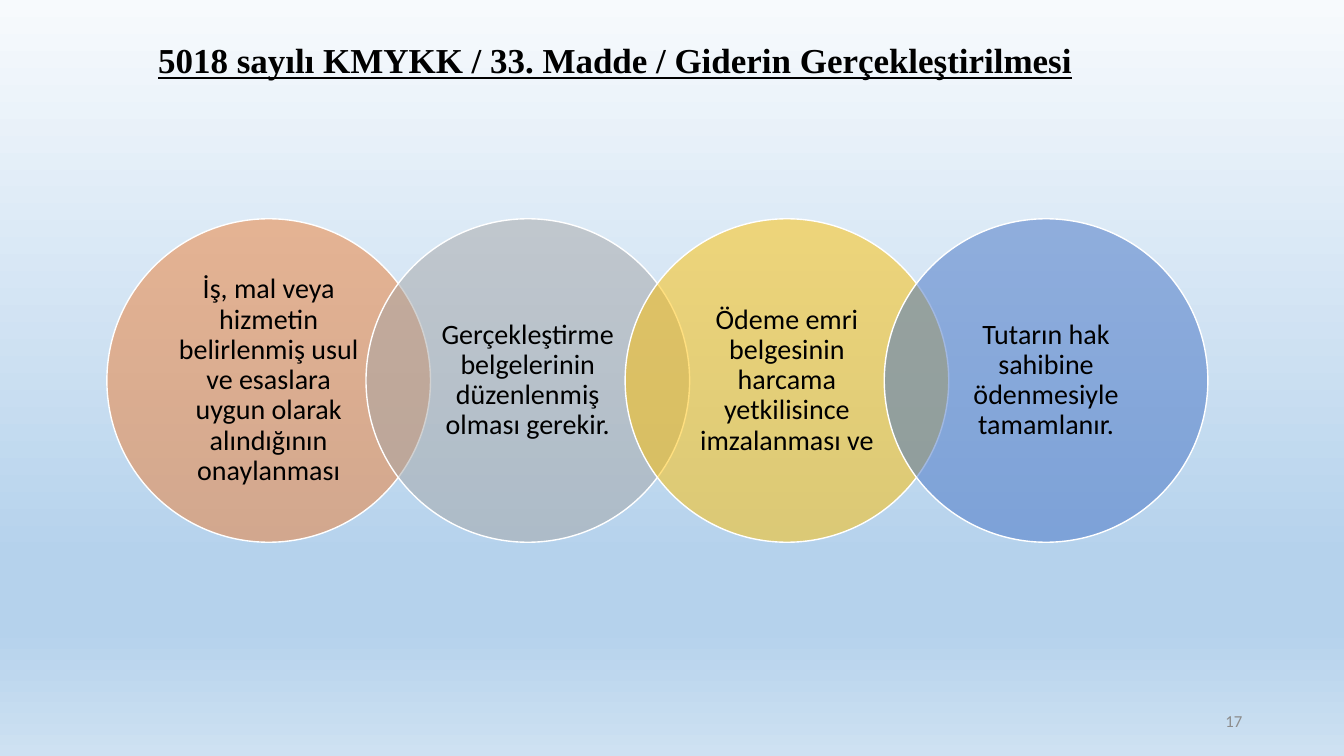
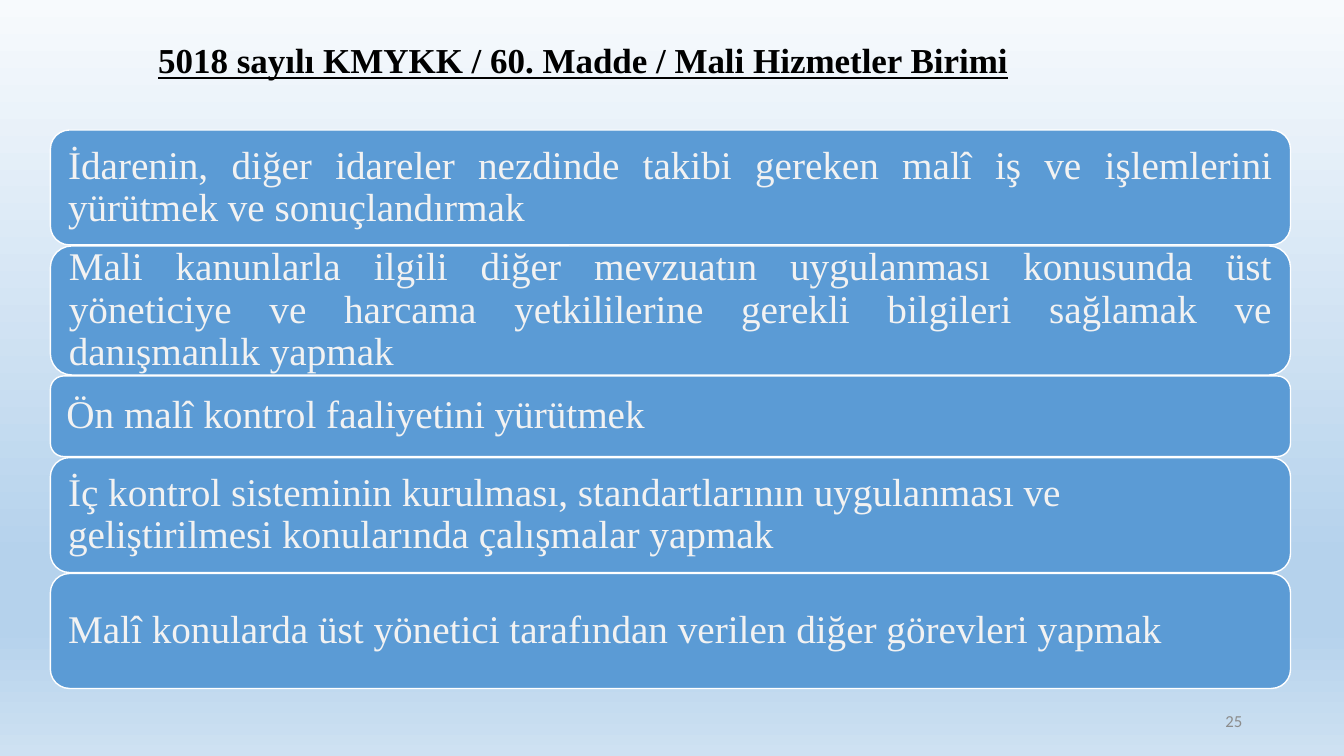
from dataclasses import dataclass
import copy

import lxml.etree
import pptx
import pptx.dml.color
import pptx.enum.shapes
import pptx.enum.text
import pptx.presentation
import pptx.shapes.autoshape
import pptx.slide
import pptx.util

Inches = pptx.util.Inches
Pt = pptx.util.Pt
RGBColor = pptx.dml.color.RGBColor
Align = pptx.enum.text.PP_ALIGN
Anchor = pptx.enum.text.MSO_ANCHOR
Shape = pptx.enum.shapes.MSO_SHAPE

# Colours and fonts
BLACK = RGBColor(0x00, 0x00, 0x00)
WHITE = RGBColor(0xFF, 0xFF, 0xFF)
GREY = RGBColor(0x8C, 0x8C, 0x8C)
PALE = RGBColor(0xF2, 0xF2, 0xF2)
BLUE = RGBColor(0x5B, 0x9B, 0xD5)
ORANGE = RGBColor(0xED, 0x7D, 0x31)
SILVER = RGBColor(0xA5, 0xA5, 0xA5)
GOLD = RGBColor(0xFF, 0xC0, 0x00)
NAVY = RGBColor(0x44, 0x72, 0xC4)
SKY = [
    (0, RGBColor(0xF7, 0xFA, 0xFD)),
    (0.74, RGBColor(0xB5, 0xD2, 0xEC)),
    (0.83, RGBColor(0xB5, 0xD2, 0xEC)),
    (1, RGBColor(0xCE, 0xE1, 0xF2)),
]
SERIF = "Times New Roman"
SANS = "Calibri"
NS = {"a": "http://schemas.openxmlformats.org/drawingml/2006/main"}


@dataclass
class Style:
    font: str
    size: int
    color: RGBColor
    align: Align = Align.LEFT
    space: float = 1.0
    strong: bool = False
    pad: tuple[float, float] = (0.1, 0.05)


@dataclass
class Box:
    left: float
    top: float
    width: float
    height: float

    def place(self) -> tuple[pptx.util.Length, ...]:
        return (Inches(self.left), Inches(self.top),
                Inches(self.width), Inches(self.height))


@dataclass
class Circle:
    text: str
    color: RGBColor


@dataclass
class Bar:
    text: str
    height: float
    align: Align = Align.LEFT


TITLE = Style(SERIF, 25, BLACK, space=0.9, strong=True)
NUMBER = Style(SANS, 12, GREY, Align.RIGHT)
RING = Style(SANS, 20, BLACK, Align.CENTER, 0.9, pad=(0.18, 0.03))

CIRCLES = [
    Circle("İş, mal veya hizmetin belirlenmiş usul ve esaslara uygun "
           "olarak alındığının onaylanması", ORANGE),
    Circle("Gerçekleştirme belgelerinin düzenlenmiş olması gerekir.", SILVER),
    Circle("Ödeme emri belgesinin harcama yetkilisince imzalanması ve", GOLD),
    Circle("Tutarın hak sahibine ödenmesiyle tamamlanır.", NAVY),
]
BARS = [
    Bar("İdarenin, diğer idareler nezdinde takibi gereken malî iş ve "
        "işlemlerini yürütmek ve sonuçlandırmak", 1.14, Align.JUSTIFY),
    Bar("Mali kanunlarla ilgili diğer mevzuatın uygulanması konusunda üst "
        "yöneticiye ve harcama yetkililerine gerekli bilgileri sağlamak ve "
        "danışmanlık yapmak", 1.28, Align.JUSTIFY),
    Bar("Ön malî kontrol faaliyetini yürütmek", 0.8),
    Bar("İç kontrol sisteminin kurulması, standartlarının uygulanması ve "
        "geliştirilmesi konularında çalışmalar yapmak", 1.14),
    Bar("Malî konularda üst yönetici tarafından verilen diğer görevleri "
        "yapmak", 1.14),
]


# Shared drawing
def write(shape: pptx.shapes.autoshape.Shape, text: str, style: Style) -> None:
    frame = shape.text_frame
    frame.word_wrap = True
    frame.vertical_anchor = Anchor.MIDDLE
    frame.margin_left = frame.margin_right = Inches(style.pad[0])
    frame.margin_top = frame.margin_bottom = Inches(style.pad[1])
    para = frame.paragraphs[0]
    para.text = text
    para.alignment = style.align
    para.line_spacing = style.space
    font = para.font
    font.name = style.font
    font.size = Pt(style.size)
    font.color.rgb = style.color
    font.bold = font.underline = style.strong


def label(slide: pptx.slide.Slide, box: Box, text: str, style: Style) -> None:
    write(slide.shapes.add_textbox(*box.place()), text, style)


def panel(slide: pptx.slide.Slide, kind: Shape, box: Box, color: RGBColor,
          text: str, style: Style) -> pptx.shapes.autoshape.Shape:
    shape = slide.shapes.add_shape(kind, *box.place())
    shape.shadow.inherit = False
    shape.fill.solid()
    shape.fill.fore_color.rgb = color
    shape.line.color.rgb = WHITE
    shape.line.width = Pt(1)
    write(shape, text, style)
    return shape


def fade(shape: pptx.shapes.autoshape.Shape, share: int) -> None:
    color = shape.element.spPr.find("a:solidFill/a:srgbClr", NS)
    alpha = lxml.etree.SubElement(color, f"{{{NS['a']}}}alpha")
    alpha.set("val", str(share * 1000))


def paint(master: pptx.slide.SlideMaster) -> None:
    fill = master.background.fill
    fill.gradient()
    fill.gradient_angle = 270
    stops = master.element.find(".//a:gsLst", NS)
    for _ in range(len(SKY) - len(stops)):
        stops.append(copy.deepcopy(stops[0]))
    for stop, (spot, color) in zip(fill.gradient_stops, SKY):
        stop.position = spot
        stop.color.rgb = color


def start(deck: pptx.presentation.Presentation, title: str,
          number: int) -> pptx.slide.Slide:
    slide = deck.slides.add_slide(deck.slide_layouts[6])
    label(slide, Box(1.47, 0.22, 10.52, 0.8), title, TITLE)
    label(slide, Box(9.42, 6.95, 3, 0.4), str(number), NUMBER)
    return slide


# Slide bodies
def chain(slide: pptx.slide.Slide) -> None:
    left, top, size, step = 1.06, 2.17, 3.21, 2.57
    for index, item in enumerate(CIRCLES):
        box = Box(left + index * step, top, size, size)
        fade(panel(slide, Shape.OVAL, box, item.color, item.text, RING), 50)


def stack(slide: pptx.slide.Slide) -> None:
    top, gap = 1.29, 0.01
    for bar in BARS:
        style = Style(SERIF, 28, PALE, bar.align, 0.9, pad=(0.12, 0.12))
        box = Box(0.5, top, 12.3, bar.height)
        panel(slide, Shape.ROUNDED_RECTANGLE, box, BLUE, bar.text, style)
        top += bar.height + gap


def main() -> None:
    deck = pptx.Presentation()
    deck.slide_width = Inches(13.33)
    deck.slide_height = Inches(7.5)
    paint(deck.slide_master)
    chain(start(
        deck, "5018 sayılı KMYKK / 33. Madde / Giderin Gerçekleştirilmesi", 17))
    stack(start(
        deck, "5018 sayılı KMYKK / 60. Madde / Mali Hizmetler Birimi", 25))
    deck.save("out.pptx")


if __name__ == "__main__":
    main()
